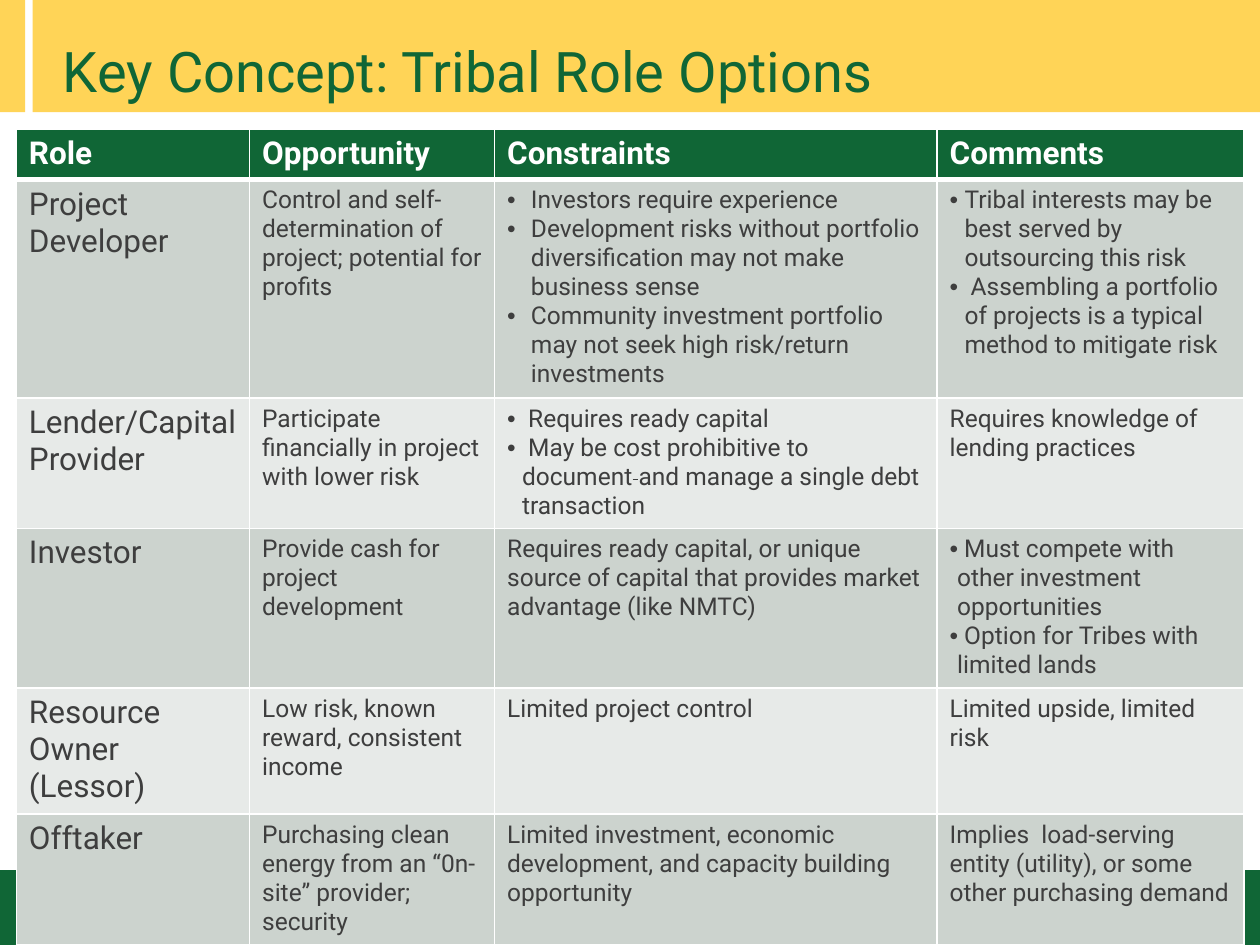
from dataclasses import dataclass

from pptx import Presentation
from pptx.dml.color import RGBColor
from pptx.enum.shapes import MSO_CONNECTOR, MSO_SHAPE
from pptx.enum.text import MSO_ANCHOR
from pptx.oxml.ns import qn
from pptx.util import Cm, Pt
from lxml import etree

RECT = MSO_SHAPE.RECTANGLE
STRAIGHT = MSO_CONNECTOR.STRAIGHT
TOP = MSO_ANCHOR.TOP


@dataclass(frozen=True)
class Theme:
    font: str = "Roboto"
    green: str = "106636"
    gold: str = "FFD457"
    white: str = "FFFFFF"
    ink: str = "3E3E3E"
    bands: tuple = ("CCD3CE", "E7EAE8")
    title: int = 32
    role: int = 18
    body: int = 14


@dataclass(frozen=True)
class Bullets:
    indent: float
    items: tuple


T = Theme()
HEADERS = ("Role", "Opportunity", "Constraints", "Comments")
COL_WIDTHS = (4.7, 4.94, 8.92, 6.19)
ROW_HEIGHTS = (1.02, 3.8, 2.03, 2.64, 2.54, 2.57)
ROLES = (
    ("Project Developer",
     "Control and self-determination of project; potential for profits",
     Bullets(0.48, (
         "Investors require experience",
         "Development risks without portfolio diversification may not make business sense",
         "Community investment portfolio may not seek high risk/return investments")),
     Bullets(0.3, (
         "Tribal interests may be best served by outsourcing this risk",
         " Assembling a portfolio of projects is a typical method to mitigate risk"))),
    ("Lender/Capital Provider",
     "Participate financially in project with lower risk",
     Bullets(0.3, (
         " Requires ready capital",
         (" May be cost prohibitive to document", " ",
          "and manage a single debt transaction"))),
     "Requires knowledge of lending practices"),
    ("Investor",
     "Provide cash for project development",
     "Requires ready capital, or unique source of capital that provides market "
     "advantage (like NMTC)",
     Bullets(0.15, (
         " Must compete with other investment opportunities",
         " Option for Tribes with limited lands"))),
    ("Resource Owner (Lessor)",
     "Low risk, known reward, consistent income",
     "Limited project control",
     "Limited upside, limited risk"),
    ("Offtaker",
     "Purchasing clean energy from an “0n-site” provider; security",
     "Limited investment, economic development, and capacity building opportunity",
     "Implies  load-serving entity (utility), or some other purchasing demand"),
)


def rgb(color):
    return RGBColor.from_string(color)


def add_run(p, text, size, color, bold=False):
    r = p.add_run()
    r.text = text
    for name, value in {"name": T.font, "size": Pt(size), "bold": bold}.items():
        setattr(r.font, name, value)
    r.font.color.rgb = rgb(color)
    return r


def add_band(s, left, top, width, height, color):
    sp = s.shapes.add_shape(RECT, Cm(left), Cm(top), Cm(width), Cm(height))
    sp.shadow.inherit = False
    sp.fill.solid()
    sp.fill.fore_color.rgb = rgb(color)
    sp.line.fill.background()
    return sp


def add_rule(s, y, width, color):
    line = s.shapes.add_connector(STRAIGHT, Cm(0), Cm(y), Cm(width), Cm(y))
    line.line.color.rgb = rgb(color)
    line.line.width = Pt(0.5)
    etree.SubElement(line._element.spPr, qn("a:effectLst"))


def add_title(s, text):
    sp = s.shapes.add_textbox(Cm(1.02), Cm(0.48), Cm(22.86), Cm(2.74))
    tf = sp.text_frame
    for name, value in {"word_wrap": True, "vertical_anchor": TOP,
                        "margin_top": Cm(0.25)}.items():
        setattr(tf, name, value)
    add_run(tf.paragraphs[0], text, T.title, T.green)


def set_bullet(p, indent):
    pPr = p._p.get_or_add_pPr()
    pPr.set("marL", str(Cm(indent)))
    pPr.set("indent", str(-Cm(indent)))
    etree.SubElement(pPr, qn("a:buFont"), typeface="Arial")
    etree.SubElement(pPr, qn("a:buChar"), char="•")


def set_borders(cell, bottom):
    tcPr = cell._tc.get_or_add_tcPr()
    widths = {"lnL": 1, "lnR": 1, "lnT": 1, "lnB": bottom}
    for i, (tag, width) in enumerate(widths.items()):
        ln = etree.Element(qn(f"a:{tag}"), w=str(Pt(width)))
        fill = etree.SubElement(ln, qn("a:solidFill"))
        etree.SubElement(fill, qn("a:srgbClr"), val=T.white)
        tcPr.insert(i, ln)


def fill_cell(cell, content, size, color, fill, bold=False, bottom=1):
    cell.fill.solid()
    cell.fill.fore_color.rgb = rgb(fill)
    set_borders(cell, bottom)
    tf = cell.text_frame
    bulleted = isinstance(content, Bullets)
    items = content.items if bulleted else (content,)
    for i, item in enumerate(items):
        p = tf.add_paragraph() if i else tf.paragraphs[0]
        if bulleted:
            set_bullet(p, content.indent)
        parts = (item,) if isinstance(item, str) else item
        for part in parts:
            r = add_run(p, part, size, color, bold)
            if part == " ":
                r._r.get_or_add_rPr().set("strike", "sngStrike")


def add_role_table(s):
    frame = s.shapes.add_table(len(ROW_HEIGHTS), len(COL_WIDTHS), Cm(0.33), Cm(2.6),
                               Cm(sum(COL_WIDTHS)), Cm(sum(ROW_HEIGHTS)))
    table = frame.table
    table.horz_banding = False
    for col, width in zip(table.columns, COL_WIDTHS):
        col.width = Cm(width)
    for row, height in zip(table.rows, ROW_HEIGHTS):
        row.height = Cm(height)
    for c, text in enumerate(HEADERS):
        fill_cell(table.cell(0, c), text, T.role, T.white, T.green, bold=True, bottom=3)
    for r, role in enumerate(ROLES):
        for c, content in enumerate(role):
            size = T.body if c else T.role
            fill_cell(table.cell(r + 1, c), content, size, T.ink, T.bands[r % 2])


def main():
    prs = Presentation()
    prs.slide_width, prs.slide_height = Cm(25.4), Cm(19.05)
    s = prs.slides.add_slide(prs.slide_layouts[6])
    footer = add_band(s, 0, 17.55, 25.4, 1.5, T.green)
    footer.line.color.rgb = rgb(T.green)
    footer.line.width = Pt(0.75)
    add_band(s, 0, 0, 0.51, 2.26, T.gold)
    add_band(s, 0.66, 0, 24.74, 2.26, T.gold)
    add_rule(s, 17.55, 25.4, T.green)
    add_title(s, "Key Concept: Tribal Role Options")
    add_role_table(s)
    prs.save("out.pptx")


if __name__ == "__main__":
    main()
